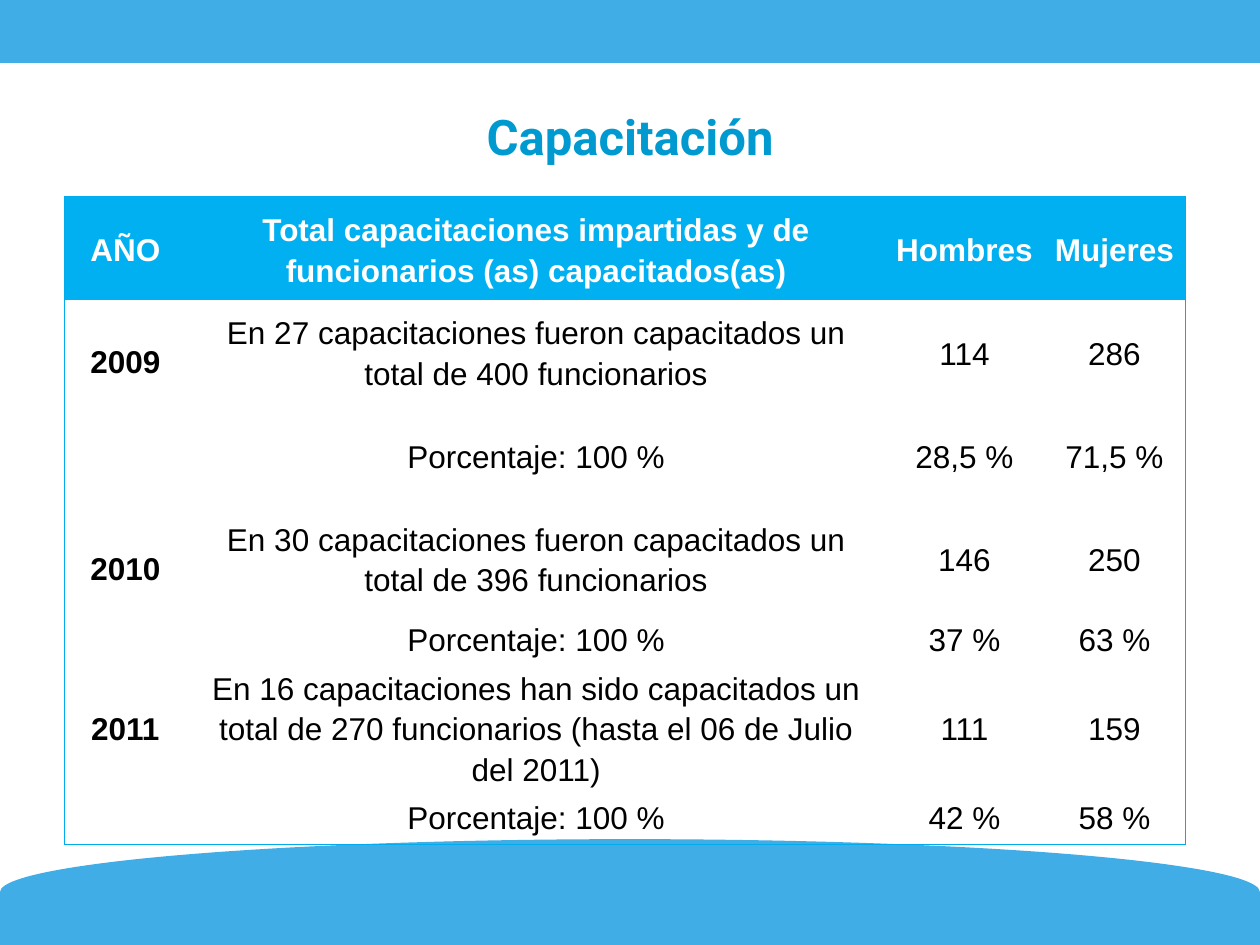
from pptx import Presentation
from pptx.dml.color import RGBColor
from pptx.enum.shapes import MSO_SHAPE
from pptx.enum.text import MSO_ANCHOR, PP_ALIGN
from pptx.oxml import parse_xml
from pptx.oxml.ns import nsdecls
from pptx.util import Inches, Pt

COLUMN_WIDTHS = [0.97, 5.55, 1.25, 1.13]
ROW_HEIGHTS = [0.82, 0.82, 0.82, 0.82, 0.45, 0.86, 0.45]
TRAINING = [
    ["AÑO", "Total capacitaciones impartidas y de funcionarios (as) capacitados(as)",
     "Hombres", "Mujeres"],
    ["2009", "En 27 capacitaciones fueron capacitados un total de 400 funcionarios",
     "114", "286"],
    ["", "Porcentaje: 100 %", "28,5 %", "71,5 %"],
    ["2010", "En 30 capacitaciones fueron capacitados un total de 396 funcionarios",
     "146", "250"],
    ["", "Porcentaje: 100 %", "37 %", "63 %"],
    ["2011", "En 16 capacitaciones han sido capacitados un total de 270 funcionarios "
     "(hasta el 06 de Julio del 2011)", "111", "159"],
    ["", "Porcentaje: 100 %", "42 %", "58 %"],
]
MERGED_YEAR_ROWS = [(1, 2), (3, 4)]


def color(hex_value):
    return RGBColor.from_string(hex_value)


class SlideBuilder:
    band_color = "41ADE7"
    title_color = "009AD0"
    header_color = "00B0F0"
    border_color = "00ACEB"

    def __init__(self, presentation):
        self.slide = presentation.slides.add_slide(presentation.slide_layouts[5])

    def centred_text(self, frame, text, **font_format):
        """Put one centred paragraph in the frame and return it."""
        frame.word_wrap = True
        paragraph = frame.paragraphs[0]
        paragraph.alignment = PP_ALIGN.CENTER
        run = paragraph.add_run()
        run.text = text
        run.font.color.rgb = color(font_format.pop("color"))
        for attribute, value in font_format.items():
            setattr(run.font, attribute, value)
        return paragraph

    def title(self, text, left, top, width, height):
        title = self.slide.shapes.title
        position = {"left": left, "top": top, "width": width, "height": height}
        for attribute, value in position.items():
            setattr(title, attribute, Inches(value))
        title.text_frame.vertical_anchor = MSO_ANCHOR.MIDDLE
        self.centred_text(title.text_frame, text, name="Roboto", size=Pt(28),
                          bold=True, color=self.title_color)

    def band(self, preset, left, top, width, height, rotation=0):
        band = self.slide.shapes.add_shape(
            preset, Inches(left), Inches(top), Inches(width), Inches(height))
        band.rotation = rotation
        band.shadow.inherit = False
        band.fill.solid()
        band.fill.fore_color.rgb = color(self.band_color)
        band.line.fill.background()

    def borders(self, cell, outer_sides):
        """Draw the outer sides of a cell and clear the inner ones."""
        properties = cell._tc.get_or_add_tcPr()
        for side in "LRTB":
            paint = (f'<a:solidFill><a:srgbClr val="{self.border_color}"/></a:solidFill>'
                     if side in outer_sides else "<a:noFill/>")
            properties.append(parse_xml(
                f'<a:ln{side} {nsdecls("a")} w="{Pt(0.75)}">{paint}</a:ln{side}>'))

    def cell(self, cell, text, is_header, is_year, outer_sides):
        self.borders(cell, outer_sides)
        if is_header:
            cell.fill.solid()
            cell.fill.fore_color.rgb = color(self.header_color)
        else:
            cell.fill.background()
        cell_format = {
            "margin_left": Inches(0.07), "margin_right": Inches(0.07),
            "margin_top": Inches(0.32 if is_year and text else 0), "margin_bottom": 0,
            "vertical_anchor": MSO_ANCHOR.TOP if is_year else MSO_ANCHOR.MIDDLE,
        }
        for attribute, value in cell_format.items():
            setattr(cell, attribute, value)
        if text:
            paragraph = self.centred_text(
                cell.text_frame, text, name="Arial", size=Pt(18),
                bold=is_header or is_year, color="FFFFFF" if is_header else "000000")
            paragraph.line_spacing = 1.15

    def table(self, rows, left, top):
        table = self.slide.shapes.add_table(
            len(rows), len(COLUMN_WIDTHS), Inches(left), Inches(top),
            Inches(sum(COLUMN_WIDTHS)), Inches(sum(ROW_HEIGHTS))).table
        table.horz_banding = False
        for column, width in zip(table.columns, COLUMN_WIDTHS):
            column.width = Inches(width)
        for row, height in zip(table.rows, ROW_HEIGHTS):
            row.height = Inches(height)
        for first, last in MERGED_YEAR_ROWS:
            table.cell(first, 0).merge(table.cell(last, 0))
        last_row, last_column = len(rows) - 1, len(COLUMN_WIDTHS) - 1
        for r, texts in enumerate(rows):
            for c, text in enumerate(texts):
                edges = {"L": c == 0, "R": c == last_column,
                         "T": r == 0, "B": r == last_row}
                outer_sides = [side for side, outer in edges.items() if outer]
                self.cell(table.cell(r, c), text, r == 0, r > 0 and c == 0, outer_sides)


def main():
    presentation = Presentation()
    presentation.slide_width = Inches(10)
    presentation.slide_height = Inches(7.5)
    builder = SlideBuilder(presentation)
    builder.band(MSO_SHAPE.RECTANGLE, 0, 0, 10, 0.5)
    builder.band(MSO_SHAPE.FLOWCHART_DELAY, 4.58, 2.08, 0.84, 10, rotation=270)
    builder.title("Capacitación", 0.5, 0.6, 9, 0.95)
    builder.table(TRAINING, 0.51, 1.56)
    presentation.save("out.pptx")


if __name__ == "__main__":
    main()
